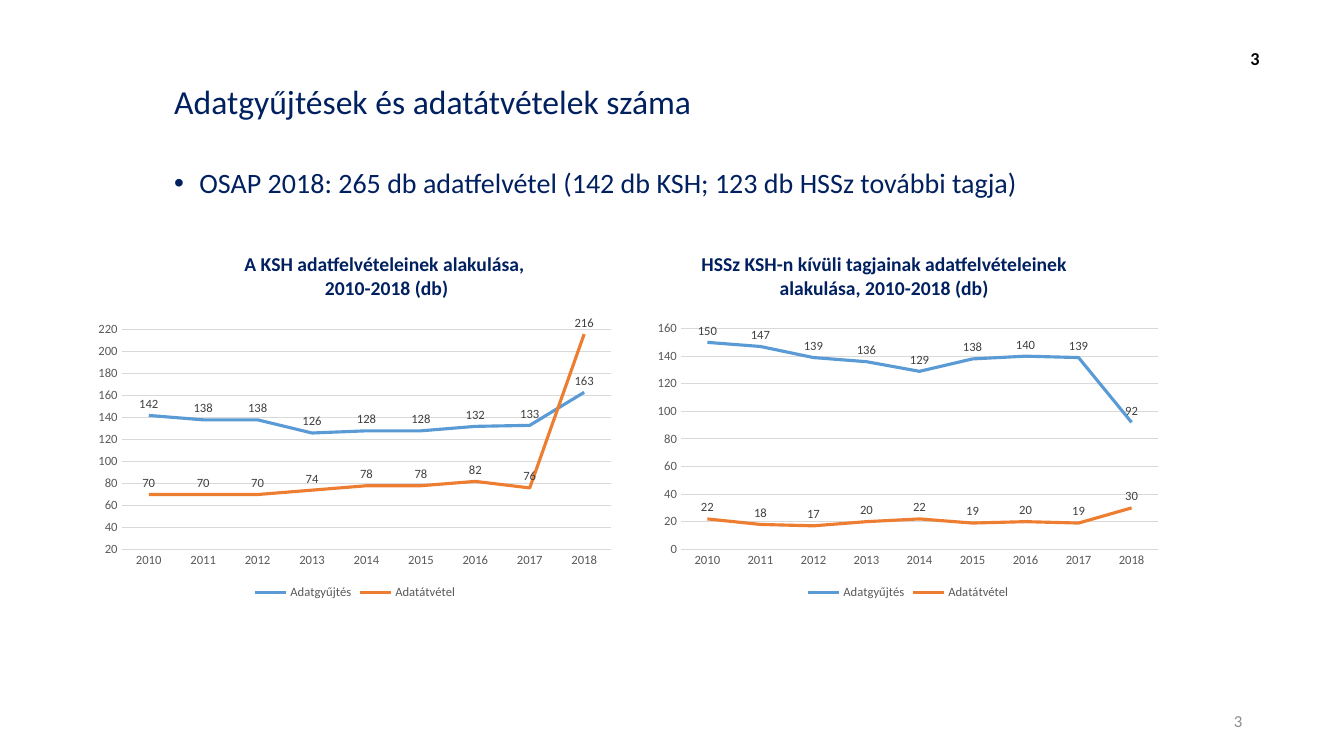
from lxml import etree
from pptx import Presentation
from pptx.chart.data import CategoryChartData
from pptx.dml.color import RGBColor
from pptx.enum import chart as ch, text as tx
from pptx.oxml import ns
from pptx.util import Inches, Pt

FONT = "Calibri"
COLORS = {
    "navy": "002060", "black": "000000", "page_gray": "8C8C8C",
    "axis_text": "595959", "label": "404040", "grid": "D9D9D9",
    "blue": "5B9BD5", "orange": "ED7D31",
}
YEARS = [str(year) for year in range(2010, 2019)]
SERIES = {"Adatgyűjtés": "blue", "Adatátvétel": "orange"}


def style_font(font, size, color, bold=False):
    font.name, font.size, font.bold = FONT, Pt(size), bold
    font.color.rgb = RGBColor.from_string(COLORS[color])


def style_line(line, color, width):
    line.color.rgb = RGBColor.from_string(COLORS[color])
    line.width = Pt(width)


def add_text(page, box, content, size, color, bold=False, align="LEFT",
             anchor="TOP", spacing=None):
    shape = page.shapes.add_textbox(*map(Inches, box))
    frame = shape.text_frame
    frame.word_wrap = True
    frame.vertical_anchor = tx.MSO_ANCHOR[anchor]
    para = frame.paragraphs[0]
    para.text = content
    para.alignment = tx.PP_ALIGN[align]
    para.line_spacing = spacing
    for span in para.runs:
        style_font(span.font, size, color, bold)
    return para


def add_bullet(page, box, content):
    para = add_text(page, box, content, 20, "navy", align="JUSTIFY", spacing=0.9)
    props = para._p.get_or_add_pPr()
    props.set("marL", str(Inches(0.25)))
    props.set("indent", str(-Inches(0.25)))
    etree.SubElement(props, ns.qn("a:buFont")).set("typeface", "Arial")
    etree.SubElement(props, ns.qn("a:buChar")).set("char", "•")


def add_line_chart(page, box, values, low, high, step):
    data = CategoryChartData()
    data.categories = YEARS
    for name, numbers in zip(SERIES, values):
        data.add_series(name, numbers)
    chart = page.shapes.add_chart(
        ch.XL_CHART_TYPE.LINE, *map(Inches, box), data).chart
    style_font(chart.font, 10, "black")
    chart.has_title = False

    # Legend
    chart.has_legend = True
    chart.legend.position = ch.XL_LEGEND_POSITION.BOTTOM
    chart.legend.include_in_layout = False
    style_font(chart.legend.font, 9, "axis_text")

    # Axes
    years, counts = chart.category_axis, chart.value_axis
    for axis in (years, counts):
        axis.major_tick_mark = axis.minor_tick_mark = ch.XL_TICK_MARK.NONE
        style_font(axis.tick_labels.font, 9, "axis_text")
    style_line(years.format.line, "grid", 0.75)
    counts.format.line.fill.background()
    counts.minimum_scale, counts.maximum_scale = low, high
    counts.major_unit = step
    style_line(counts.major_gridlines.format.line, "grid", 0.75)

    # Lines and value labels
    plot = chart.plots[0]
    plot.vary_by_categories = False
    for series, color in zip(plot.series, SERIES.values()):
        series.smooth = False
        series.marker.style = ch.XL_MARKER_STYLE.NONE
        style_line(series.format.line, color, 2.25)
        labels = series.data_labels
        labels.show_value = True
        labels.position = ch.XL_LABEL_POSITION.ABOVE
        style_font(labels.font, 9, "label")


def add_page_numbers(page, number):
    add_text(page, (9.42, 6.95, 3, 0.4), number, 12, "page_gray",
             align="RIGHT", anchor="MIDDLE")
    add_text(page, (12.2, 0.38, 0.39, 0.4), number, 13, "black", True,
             align="RIGHT", anchor="MIDDLE")


def add_heading(page, left, top):
    add_text(page, (left, top, 5.67, 0.49), "Adatgyűjtések és adatátvételek száma",
             24, "navy", anchor="MIDDLE", spacing=0.9)
    add_bullet(page, (left, top + 0.85, 8.77, 0.46),
               "OSAP 2018: 265 db adatfelvétel (142 db KSH; 123 db HSSz további tagja)")


def add_chart_panel(page, box, caption, caption_left, caption_width, values, scale):
    left, top, width, height = box
    add_text(page, (caption_left, top, caption_width, 0.57), caption,
             14, "navy", True, align="CENTER")
    add_line_chart(page, (left, top + 0.68, width, height - 0.68), values, *scale)


def main():
    deck = Presentation()
    deck.slide_width, deck.slide_height = Inches(13.33), Inches(7.5)
    page = deck.slides.add_slide(deck.slide_layouts[6])

    add_page_numbers(page, "3")
    add_heading(page, 1.63, 0.78)
    add_chart_panel(
        page, (0.87, 2.45, 5.3, 3.54),
        "A KSH adatfelvételeinek alakulása, \v2010-2018 (db)", 2.25, 3.17,
        [(142, 138, 138, 126, 128, 128, 132, 133, 163),
         (70, 70, 70, 74, 78, 78, 82, 76, 216)], (20, 220, 20))
    add_chart_panel(
        page, (6.42, 2.45, 5.17, 3.54),
        "HSSz KSH-n kívüli tagjainak adatfelvételeinek alakulása, 2010-2018 (db)",
        6.82, 3.9,
        [(150, 147, 139, 136, 129, 138, 140, 139, 92),
         (22, 18, 17, 20, 22, 19, 20, 19, 30)], (0, 160, 20))
    deck.save("out.pptx")


if __name__ == "__main__":
    main()
